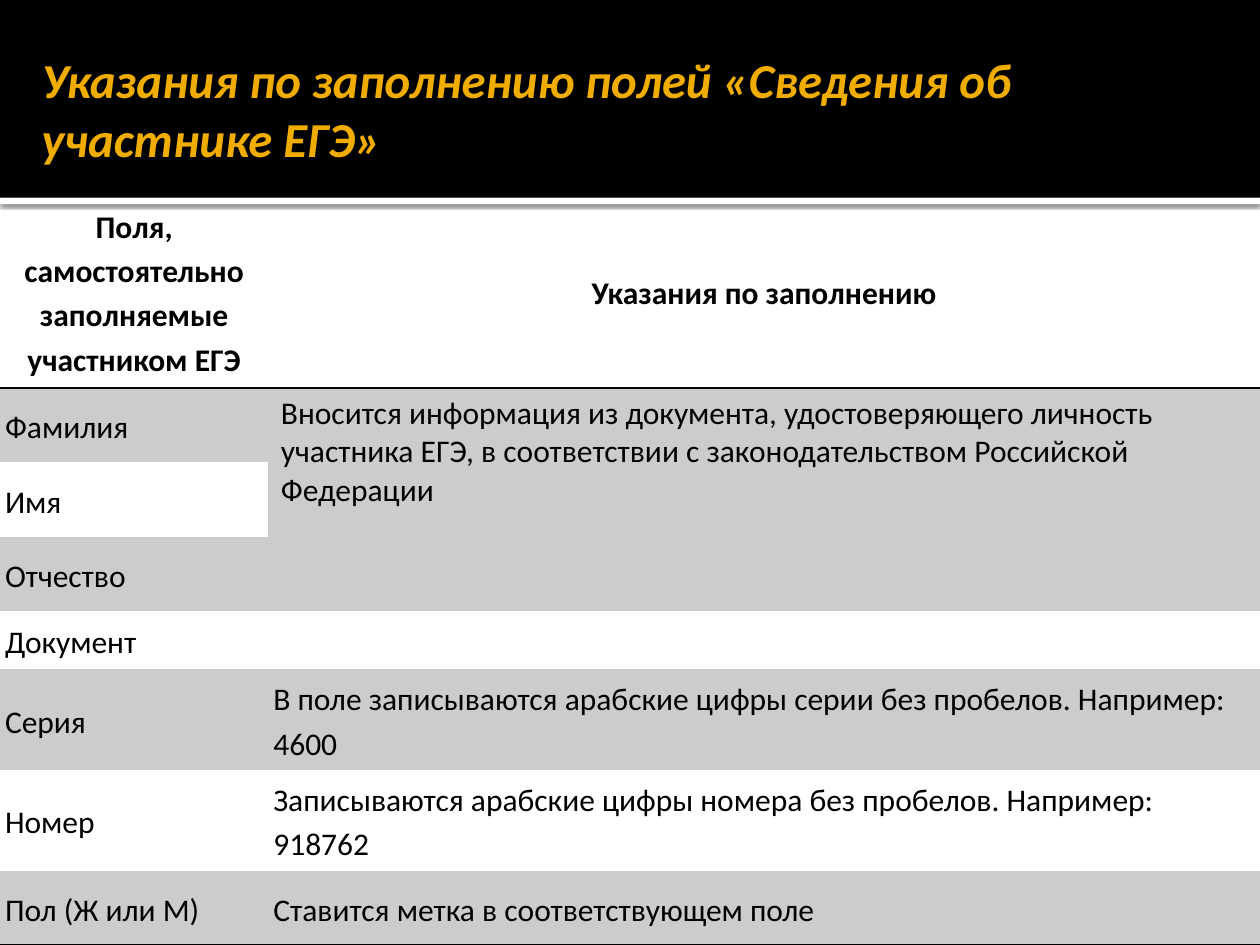
import pptx
import pptx.dml.color
import pptx.enum.shapes
import pptx.enum.text
import pptx.oxml
import pptx.oxml.ns
import pptx.util

Inches = pptx.util.Inches
Pt = pptx.util.Pt
Align = pptx.enum.text.PP_ALIGN
Anchor = pptx.enum.text.MSO_ANCHOR
NAMESPACE = pptx.oxml.ns.nsdecls("a")

BLACK, WHITE, GOLD, GREY = "000000", "FFFFFF", "F0AD00", "CCCCCC"
NO_GRID_STYLE = "{2D5ABB26-0587-4C30-8999-92F81FD0307C}"

TITLE = "Указания по заполнению полей «Сведения об участнике ЕГЭ»"
ROWS = [
    ("Поля, самостоятельно заполняемые участником ЕГЭ", "Указания по заполнению"),
    ("Фамилия", "Вносится информация из документа, удостоверяющего личность "
                "участника ЕГЭ, в соответствии с законодательством Российской Федерации"),
    ("Имя", ""),
    ("Отчество", ""),
    ("Документ", ""),
    ("Серия", "В поле записываются арабские цифры серии без пробелов. Например: 4600"),
    ("Номер", "Записываются арабские цифры номера без пробелов. Например: 918762"),
    ("Пол (Ж или М)", "Ставится метка в соответствующем поле"),
]
COLUMN_WIDTHS = [2.13, 7.87]
ROW_HEIGHTS = [1.54, 0.59, 0.59, 0.59, 0.46, 0.8, 0.8, 0.59]


def color(value):
    return pptx.dml.color.RGBColor.from_string(value)


def apply_format(target, values):
    for name, value in values.items():
        setattr(target, name, value)


class SlideBuilder:
    font_name = "Calibri"

    def __init__(self, slide):
        self.slide = slide

    def fill_text(self, text_frame, text, font_format, text_color, paragraph_format):
        text_frame.text = text
        paragraph = text_frame.paragraphs[0]
        apply_format(paragraph, paragraph_format)
        for run in paragraph.runs:
            apply_format(run.font, {"name": self.font_name, **font_format})
            run.font.color.rgb = color(text_color)

    def bar(self, top, height, fill, shadow=False):
        shape = self.slide.shapes.add_shape(
            pptx.enum.shapes.MSO_SHAPE.RECTANGLE, 0, Inches(top), Inches(10), Inches(height))
        shape.fill.solid()
        shape.fill.fore_color.rgb = color(fill)
        shape.line.fill.background()
        shape.shadow.inherit = False
        if shadow:
            effects = shape.element.spPr.find(pptx.oxml.ns.qn("a:effectLst"))
            effects.append(pptx.oxml.parse_xml(
                f'<a:outerShdw {NAMESPACE} blurRad="{Pt(2.5)}" dist="{Pt(0.8)}" dir="5400000">'
                f'<a:srgbClr val="{BLACK}"><a:alpha val="60000"/></a:srgbClr></a:outerShdw>'))

    def title(self, text):
        shape = self.slide.shapes.title
        apply_format(shape, {"left": Inches(0.23), "top": Inches(0.55),
                             "width": Inches(9.28), "height": Inches(1.25)})
        # The deep lower margin lifts the text into the black band
        apply_format(shape.text_frame, {
            "margin_left": Inches(0.1), "margin_right": Inches(0.05),
            "margin_top": Inches(0.05), "margin_bottom": Inches(0.68),
            "vertical_anchor": Anchor.MIDDLE, "word_wrap": True,
            "auto_size": pptx.enum.text.MSO_AUTO_SIZE.NONE})
        self.fill_text(shape.text_frame, text,
                       {"size": Pt(27.9), "bold": True, "italic": True},
                       GOLD, {"alignment": Align.LEFT})
        # Bring the title in front of the bars
        shape.element.getparent().append(shape.element)

    def border(self, cell, side):
        properties = cell._tc.get_or_add_tcPr()
        properties.insert(0, pptx.oxml.parse_xml(
            f'<a:ln{side} {NAMESPACE} w="{Pt(1)}"><a:solidFill>'
            f'<a:srgbClr val="{BLACK}"/></a:solidFill></a:ln{side}>'))

    def cell(self, cell, text, header, banded, compact):
        paragraph_format = {"alignment": Align.CENTER if header else Align.LEFT}
        if compact:
            margins = ("margin_left", "margin_right", "margin_top", "margin_bottom")
            apply_format(cell, dict.fromkeys(margins, Inches(0.04)))
            cell.vertical_anchor = Anchor.MIDDLE
            paragraph_format["line_spacing"] = 1.15
        self.fill_text(cell.text_frame, text, {"size": Pt(18), "bold": header},
                       BLACK, paragraph_format)
        if banded:
            cell.fill.solid()
            cell.fill.fore_color.rgb = color(GREY)
        else:
            cell.fill.background()

    def table(self, top, rows):
        frame = self.slide.shapes.add_table(
            len(rows), len(COLUMN_WIDTHS), 0, Inches(top),
            Inches(sum(COLUMN_WIDTHS)), Inches(sum(ROW_HEIGHTS)))
        table = frame.table
        table._tbl.tblPr.find(pptx.oxml.ns.qn("a:tableStyleId")).text = NO_GRID_STYLE
        for column, width in zip(table.columns, COLUMN_WIDTHS):
            column.width = Inches(width)
        for row, height in zip(table.rows, ROW_HEIGHTS):
            row.height = Inches(height)

        # One instruction covers the three name fields
        table.cell(1, 1).merge(table.cell(3, 1))
        last = len(rows) - 1
        for row_index, texts in enumerate(rows):
            for column_index, text in enumerate(texts):
                cell = table.cell(row_index, column_index)
                if cell.is_spanned:
                    continue
                self.cell(cell, text, header=row_index == 0, banded=row_index % 2 == 1,
                          compact=bool(text) and not cell.is_merge_origin)
                if row_index in (0, last):
                    self.border(cell, "B")
                if row_index == 0:
                    self.border(cell, "T")


def main():
    presentation = pptx.Presentation()
    presentation.slide_width = Inches(10)
    presentation.slide_height = Inches(7.5)
    builder = SlideBuilder(presentation.slides.add_slide(presentation.slide_layouts[5]))

    # Header band with its white strip
    builder.bar(1.57, 0.05, WHITE, shadow=True)
    builder.bar(0, 1.57, BLACK)
    builder.title(TITLE)

    # Instructions for each field
    builder.table(1.54, ROWS)
    presentation.save("out.pptx")


if __name__ == "__main__":
    main()
